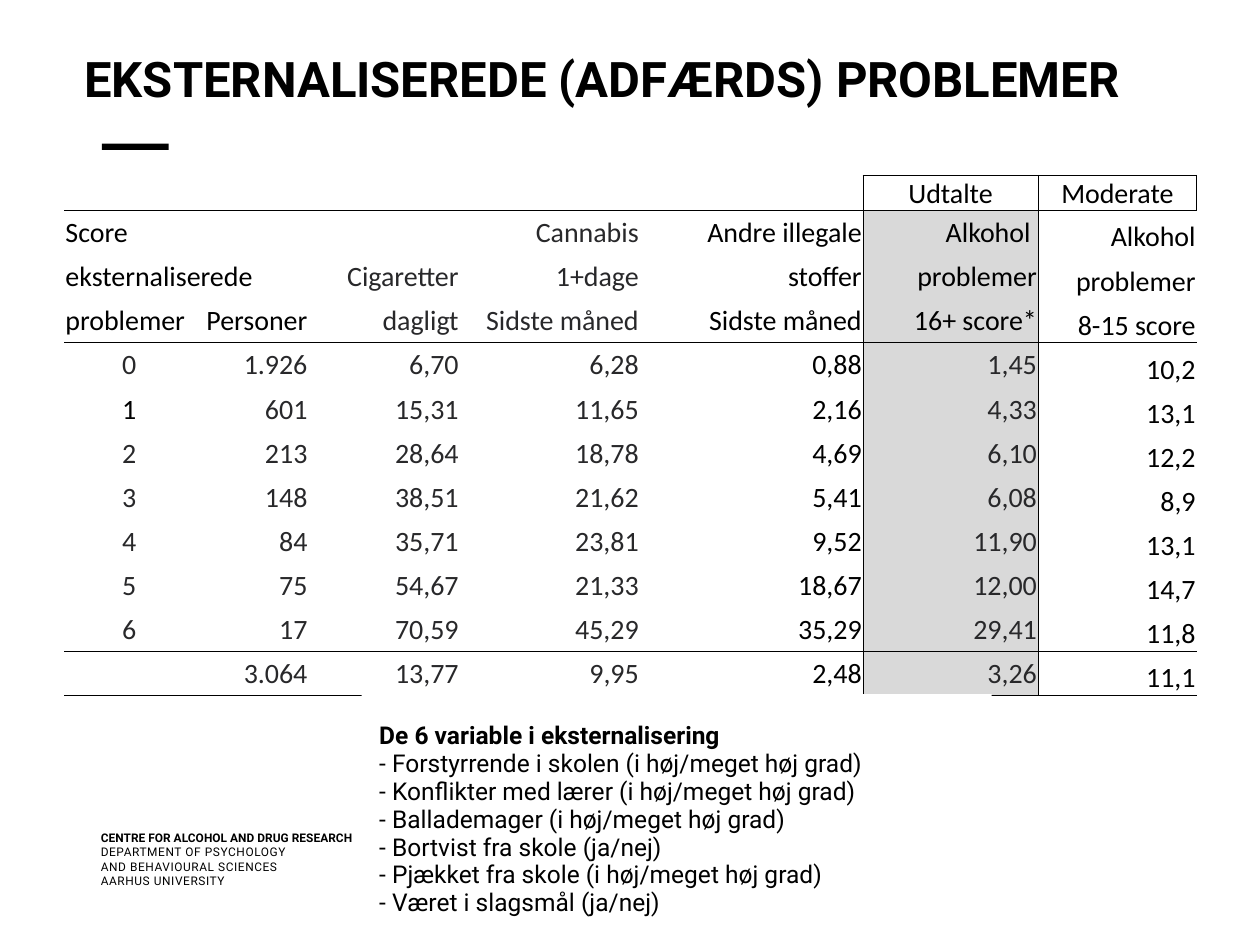
from lxml import etree
from pptx import Presentation
from pptx.dml.color import RGBColor
from pptx.enum import shapes, text
from pptx.oxml import ns
from pptx.util import Inches, Pt

BLACK = RGBColor(0, 0, 0)
DARK = RGBColor(0x28, 0x28, 0x2A)
GRAY = RGBColor(0xD9, 0xD9, 0xD9)
WHITE = RGBColor(255, 255, 255)
LEFT, MID, RIGHT = text.PP_ALIGN.LEFT, text.PP_ALIGN.CENTER, text.PP_ALIGN.RIGHT


def write(para, words, size, font="Roboto", color=BLACK, bold=False):
    run = para.add_run()
    run.text = words
    run.font.size = Pt(size)
    run.font.name = font
    run.font.color.rgb = color
    run.font.bold = bold
    return run


def label(left, top, width, height, inset=0, wrap=True):
    box = slide.shapes.add_textbox(Inches(left), Inches(top), Inches(width), Inches(height))
    frame = box.text_frame
    frame.word_wrap = wrap
    frame.margin_left = frame.margin_right = frame.margin_bottom = 0
    frame.margin_top = Inches(inset)
    return frame.paragraphs[0]


deck = Presentation()
deck.slide_width, deck.slide_height = Inches(10), Inches(7.5)
slide = deck.slides.add_slide(deck.slide_layouts[6])

para = label(0.8, 6.56, 1.93, 0.59, 0.14)
para.line_spacing = 1.03
lines = ["DEPARTMENT OF PSYCHOLOGY", "AND BEHAVIOURAL SCIENCES", "AARHUS UNIVERSITY"]
for i, line in enumerate(lines):
    if i:
        para.add_line_break()
    write(para, line, 6.8).font._element.set("spc", "30")

para = label(0.8, 6.56, 2.01, 0.26, 0.03, False)
write(para, "CENTRE FOR ALCOHOL AND DRUG RESEARCH", 6.8, bold=True)

bar = slide.shapes.add_shape(shapes.MSO_SHAPE.RECTANGLE, Inches(0.81), Inches(1.14), Inches(0.53), Inches(0.05))
bar.shadow.inherit = False
bar.fill.solid()
bar.fill.fore_color.rgb = BLACK
bar.line.fill.background()

para = label(0.67, 0.44, 9.07, 0.63)
para.line_spacing = 0.89
write(para, "EKSTERNALISEREDE (ADFÆRDS) PROBLEMER", 28, bold=True)

rows = [
    ["", "", "", "", "", "Udtalte", "Moderate"],
    ["Score", "", "", "Cannabis", "Andre illegale", "Alkohol\u00a0", "Alkohol"],
    ["eksternaliserede", "", "Cigaretter", "1+dage", "stoffer", "problemer", "problemer"],
    ["problemer", "Personer", "dagligt", "Sidste måned", "Sidste måned", "16+ score*", "8-15 score"],
    ["0", "1.926", "6,70", "6,28", "0,88", "1,45", "10,2"],
    ["1", "601", "15,31", "11,65", "2,16", "4,33", "13,1"],
    ["2", "213", "28,64", "18,78", "4,69", "6,10", "12,2"],
    ["3", "148", "38,51", "21,62", "5,41", "6,08", "8,9"],
    ["4", "84", "35,71", "23,81", "9,52", "11,90", "13,1"],
    ["5", "75", "54,67", "21,33", "18,67", "12,00", "14,7"],
    ["6", "17", "70,59", "45,29", "35,29", "29,41", "11,8"],
    ["", "3.064", "13,77", "9,95", "2,48", "3,26", "11,1"],
]
wides = [1.03, 0.91, 1.2, 1.43, 1.77, 1.39, 1.26]
grid = slide.shapes.add_table(12, 7, Inches(0.51), Inches(1.39), Inches(8.99), Inches(4.13)).table
grid.first_row = grid.horz_banding = False
for col, wide in zip(grid.columns, wides):
    col.width = Inches(wide)
for r, row in enumerate(grid.rows):
    row.height = Inches(0.35 if r else 0.28)
grid.cell(2, 0).merge(grid.cell(2, 1))

for r, row in enumerate(rows):
    for c, words in enumerate(row):
        cell = grid.cell(r, c)
        cell.margin_left = cell.margin_right = cell.margin_top = Inches(0.01)
        cell.margin_bottom = 0
        low = r == 0 or c == 6
        cell.vertical_anchor = text.MSO_ANCHOR.BOTTOM if low else text.MSO_ANCHOR.MIDDLE
        sides = {
            "L": c in (5, 6),
            "R": c in (4, 5) or (r == 0 and c == 6),
            "T": r in (1, 4, 11) or (r == 0 and c > 4),
            "B": r in (0, 3, 10, 11),
        }
        props = cell._tc.get_or_add_tcPr()
        for side, drawn in sides.items():
            edge = etree.SubElement(props, ns.qn("a:ln" + side), w=str(Pt(0.5)))
            fill = etree.SubElement(edge, ns.qn("a:solidFill" if drawn else "a:noFill"))
            if drawn:
                etree.SubElement(fill, ns.qn("a:srgbClr"), val=str(BLACK))
        if c == 5 and r:
            cell.fill.solid()
            cell.fill.fore_color.rgb = GRAY
        else:
            cell.fill.background()
        para = cell.text_frame.paragraphs[0]
        if not words:
            etree.SubElement(para._p, ns.qn("a:endParaRPr"), sz="1600")
            continue
        if r == 0 or (c == 0 and r > 3):
            para.alignment = MID
        else:
            para.alignment = LEFT if c == 0 else RIGHT
        dark = c in ((2, 3) if r < 4 else (0, 1, 2, 3, 5)) and words != "1"
        write(para, words, 16, "Calibri", DARK if dark else BLACK)

note = slide.shapes.add_shape(shapes.MSO_SHAPE.RECTANGLE, Inches(2.87), Inches(5.51), Inches(5), Inches(2.01))
note.shadow.inherit = False
note.fill.solid()
note.fill.fore_color.rgb = WHITE
note.line.fill.background()
frame = note.text_frame
frame.word_wrap = True
frame.vertical_anchor = text.MSO_ANCHOR.TOP
frame.margin_left, frame.margin_top = Inches(0.14), Inches(0.22)
frame.margin_right = frame.margin_bottom = 0
items = [
    "De 6 variable i eksternalisering",
    "- Forstyrrende i skolen (i høj/meget høj grad)",
    "- Konflikter med lærer (i høj/meget høj grad)",
    "- Ballademager (i høj/meget høj grad)",
    "- Bortvist fra skole (ja/nej)",
    "- Pjækket fra skole (i høj/meget høj grad)",
    "- Været i slagsmål (ja/nej)",
]
for i, item in enumerate(items):
    para = frame.add_paragraph() if i else frame.paragraphs[0]
    para.alignment = LEFT
    para.line_spacing = 0.95
    write(para, item, 14, bold=i == 0)

deck.save("out.pptx")
